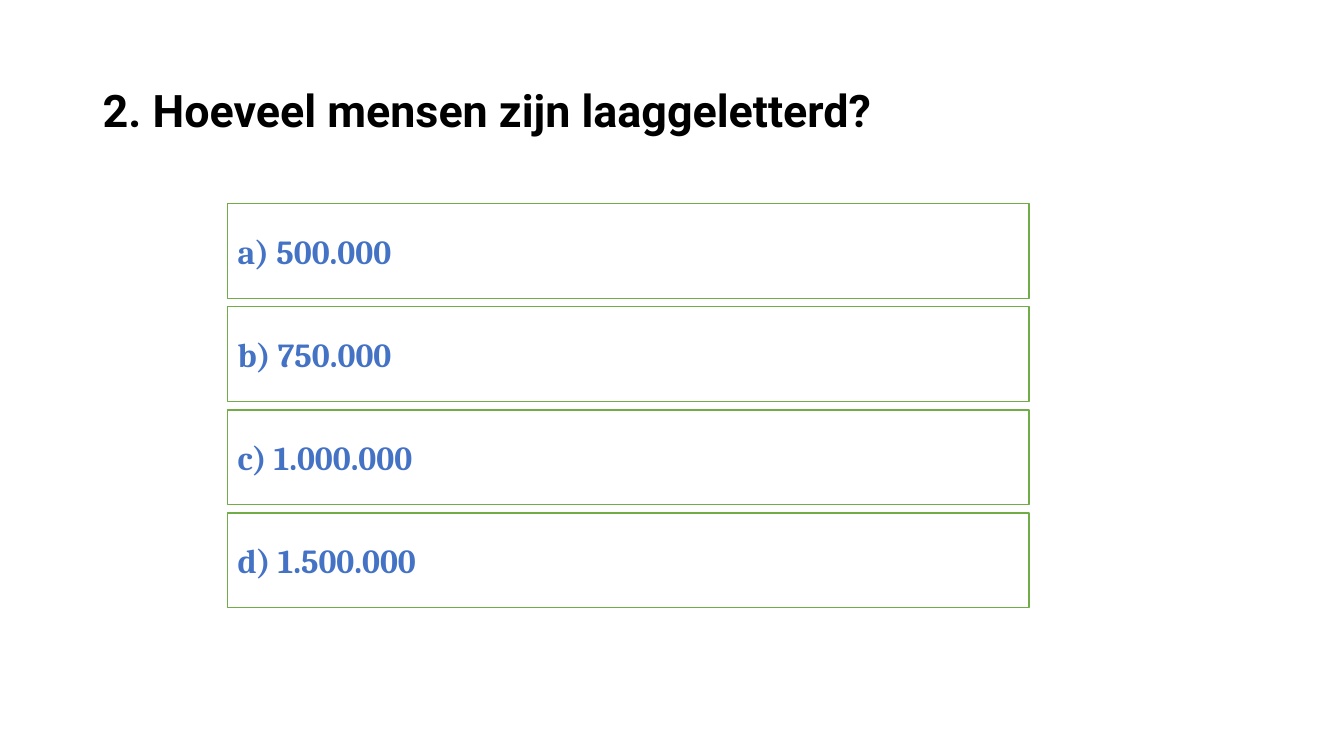
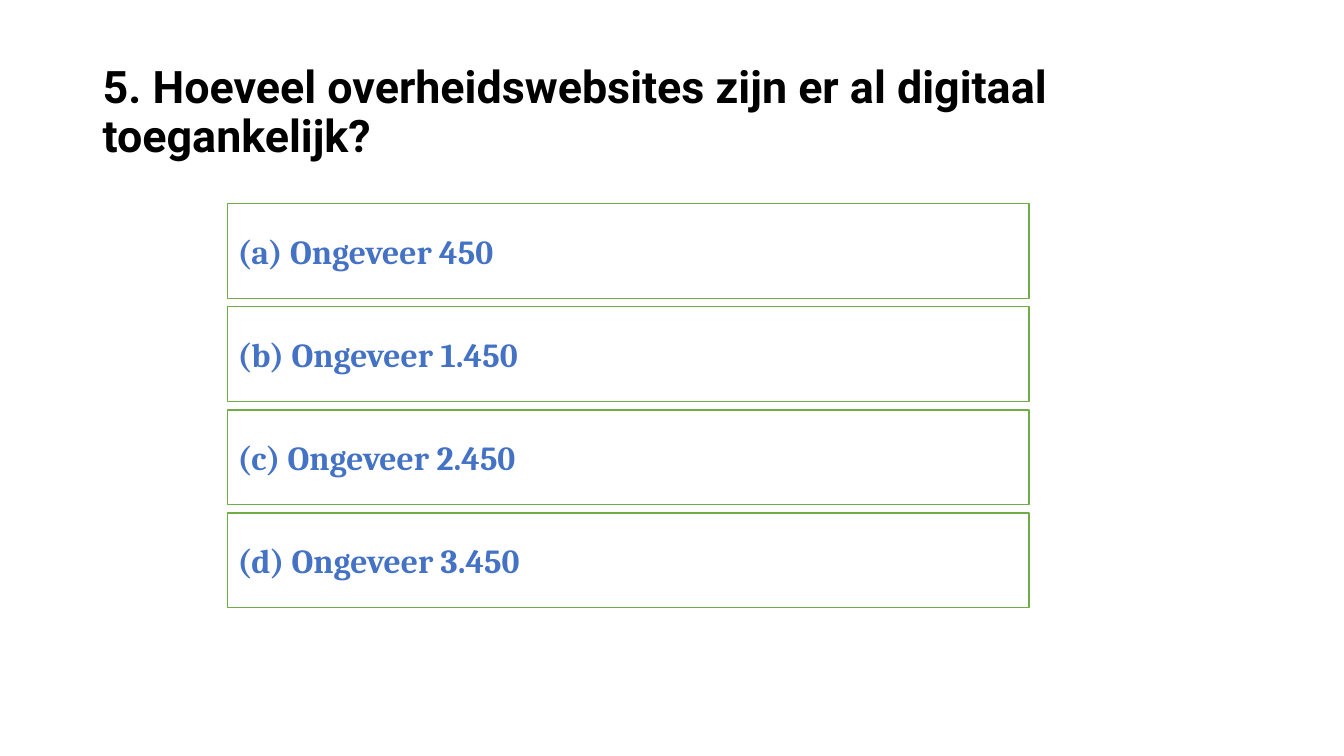
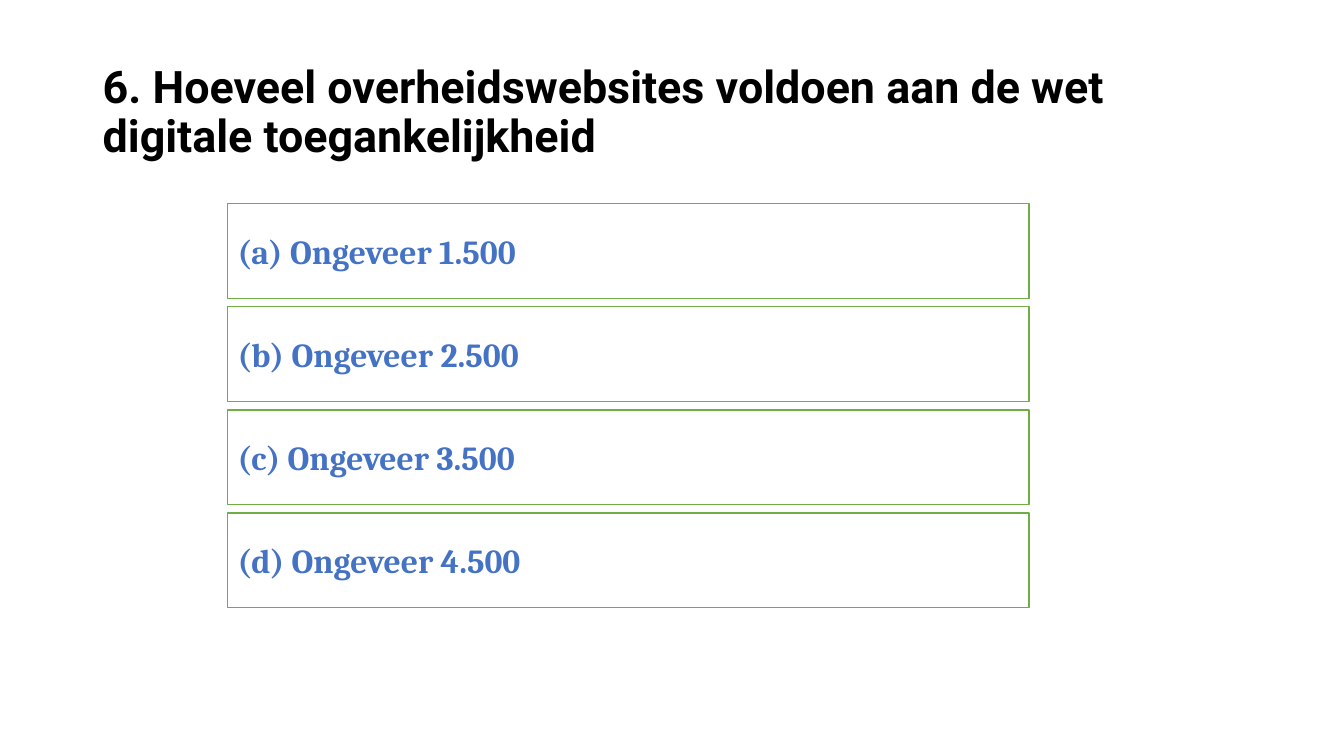
from dataclasses import dataclass

from pptx import Presentation
from pptx.dml.color import RGBColor
from pptx.enum.shapes import MSO_SHAPE
from pptx.enum.text import MSO_ANCHOR, PP_ALIGN
from pptx.util import Inches, Pt


@dataclass(frozen=True)
class Theme:
    paper: RGBColor = RGBColor(0xFF, 0xFF, 0xFF)
    ink: RGBColor = RGBColor(0x00, 0x00, 0x00)
    answer: RGBColor = RGBColor(0x44, 0x72, 0xC4)
    border: RGBColor = RGBColor(0x70, 0xAD, 0x47)
    border_width: Pt = Pt(1)
    title_font: str = "Roboto"
    title_size: Pt = Pt(32)
    answer_font: str = "Cambria"
    answer_size: Pt = Pt(24)


class Quiz:
    """Holds the theme and the current slide, on a grid of 100 columns and rows."""

    TITLE = (6.9, 5.33, 86.25, 19.33)
    ANSWER = (16.95, 26.93, 59.63, 12.53)
    PITCH = 13.64

    def __init__(self, theme):
        self.theme = theme
        self.prs = Presentation()
        self.prs.slide_width, self.prs.slide_height = Inches(13.33), Inches(7.5)

    def place(self, left, top, width, height):
        col, row = self.prs.slide_width / 100, self.prs.slide_height / 100
        return [round(v) for v in (left * col, top * row, width * col, height * row)]

    def new_slide(self):
        self.s = self.prs.slides.add_slide(self.prs.slide_layouts[6])
        fill = self.s.background.fill
        fill.solid()
        fill.fore_color.rgb = self.theme.paper

    def set_text(self, sp, text, color, spacing=1.0, **font):
        tf = sp.text_frame
        tf.word_wrap = True
        tf.vertical_anchor = MSO_ANCHOR.MIDDLE
        p = tf.paragraphs[0]
        p.alignment, p.line_spacing = PP_ALIGN.LEFT, spacing
        r = p.add_run()
        r.text = text
        for name, value in font.items():
            setattr(r.font, name, value)
        r.font.color.rgb = color

    def title(self, text):
        t = self.theme
        sp = self.s.shapes.add_textbox(*self.place(*self.TITLE))
        self.set_text(sp, text, t.ink, 0.9, name=t.title_font, size=t.title_size, bold=True)

    def answer(self, index, text):
        t = self.theme
        left, top, width, height = self.ANSWER
        box = self.place(left, top + index * self.PITCH, width, height)
        sp = self.s.shapes.add_shape(MSO_SHAPE.RECTANGLE, *box)
        sp.shadow.inherit = False
        sp.fill.solid()
        sp.fill.fore_color.rgb = t.paper
        sp.line.color.rgb = t.border
        sp.line.width = t.border_width
        self.set_text(sp, text, t.answer, name=t.answer_font, size=t.answer_size, bold=True)

    def question(self, title, answers):
        self.new_slide()
        self.title(title)
        for index, text in enumerate(answers):
            self.answer(index, text)


# Questions with their answers
QUESTIONS = [
    ("2. Hoeveel mensen zijn laaggeletterd?",
     ["a) 500.000", "b) 750.000", "c) 1.000.000", "d) 1.500.000"]),
    ("5. Hoeveel overheidswebsites zijn er al digitaal toegankelijk?",
     ["(a) Ongeveer 450", "(b) Ongeveer 1.450",
      "(c) Ongeveer 2.450", "(d) Ongeveer 3.450"]),
    ("6. Hoeveel overheidswebsites voldoen aan de wet digitale toegankelijkheid",
     ["(a) Ongeveer 1.500", "(b) Ongeveer 2.500",
      "(c) Ongeveer 3.500", "(d) Ongeveer 4.500"]),
]


def main():
    quiz = Quiz(Theme())
    for title, answers in QUESTIONS:
        quiz.question(title, answers)
    quiz.prs.save("out.pptx")


if __name__ == "__main__":
    main()
